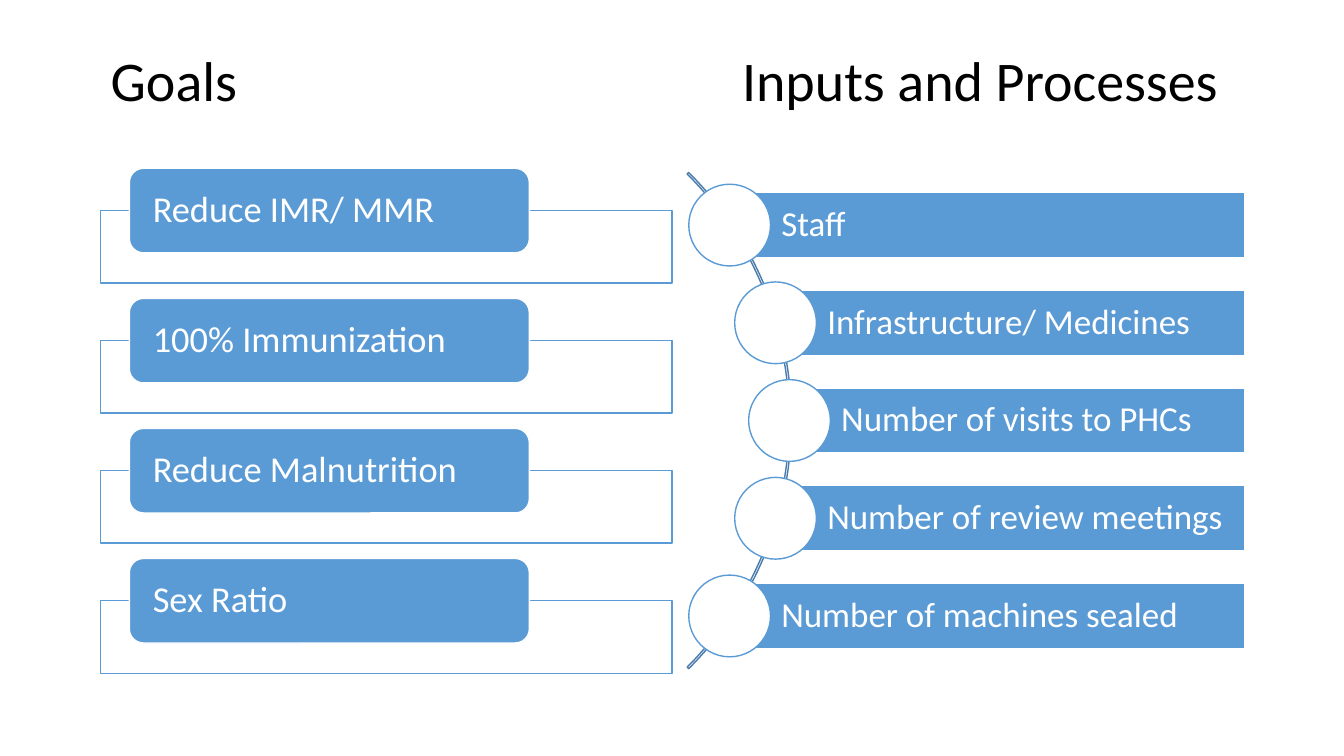
import math

import pptx
import pptx.dml.color
import pptx.enum.shapes
import pptx.enum.text
import pptx.util

Pt = pptx.util.Pt
KIND = pptx.enum.shapes.MSO_SHAPE
FONT = "Calibri"
HUES = {"blue": "5B9BD5", "dark": "497CAB", "white": "FFFFFF", "black": "000000"}
GOALS = ["Reduce IMR/ MMR", "100% Immunization", "Reduce Malnutrition", "Sex Ratio"]
INPUTS = ["Staff", "Infrastructure/ Medicines", "Number of visits to PHCs",
          "Number of review meetings", "Number of machines sealed"]


def color(name):
    return pptx.dml.color.RGBColor.from_string(HUES[name])


def add_box(slide, kind, box, fill, line):
    shape = slide.shapes.add_shape(kind, *map(Pt, box))
    shape.shadow.inherit = False
    if fill:
        shape.fill.solid()
        shape.fill.fore_color.rgb = color(fill)
    else:
        shape.fill.background()
    shape.line.color.rgb = color(line)
    shape.line.width = Pt(1)
    return shape


def set_text(shape, text, size, hue):
    para = shape.text_frame.paragraphs[0]
    para.text = text
    para.alignment = pptx.enum.text.PP_ALIGN.LEFT
    font = para.runs[0].font
    font.name, font.size = FONT, Pt(size)
    font.color.rgb = color(hue)
    return para


def add_label(shape, text, size, left, pad):
    frame = shape.text_frame
    frame.word_wrap = True
    frame.vertical_anchor = pptx.enum.text.MSO_ANCHOR.MIDDLE
    frame.margin_left = Pt(left)
    frame.margin_right = frame.margin_top = frame.margin_bottom = Pt(pad)
    set_text(shape, text, size, "white").line_spacing = 0.9


def add_title(slide, text, box):
    title = slide.shapes.add_textbox(*map(Pt, box))
    title.text_frame.word_wrap = False
    title.text_frame.auto_size = pptx.enum.text.MSO_AUTO_SIZE.SHAPE_TO_FIT_TEXT
    set_text(title, text, 40, "black")


def add_goals(slide, box):
    left, top, width, height = box
    card, frame = 60.4, 51.8
    drop = 30.2  # frame starts halfway down its card
    step = (height - drop - frame) / (len(GOALS) - 1)
    for i, goal in enumerate(GOALS):
        y = top + i * step
        add_box(slide, KIND.RECTANGLE, (left, y + drop, width, frame), "white", "blue")
        shape = add_box(slide, KIND.ROUNDED_RECTANGLE,
                        (left + width * 0.05, y, width * 0.7, card), "blue", "white")
        add_label(shape, goal, 26, 13.8, 3)


def add_inputs(slide, box):
    left, top, width, height = box
    radius, step, dot, bar = 249.2, 69.8, 58.4, 46.5
    mid = top + height / 2
    last = len(INPUTS) // 2
    # Centre of the arc, set so that the outer dots touch the left edge
    hub = left + dot / 2 - math.sqrt(radius ** 2 - (last * step) ** 2)

    # Thin arc behind the rows
    rim = radius + 1.4
    arc = add_box(slide, KIND.BLOCK_ARC, (hub - rim, mid - rim, 2 * rim, 2 * rim),
                  None, "dark")
    for i, value in enumerate((189, 27, 0.0031)):
        arc.adjustments[i] = value

    # Bars start at the dots, which sit on the arc
    for i, text in enumerate(INPUTS):
        rise = (i - last) * step
        x, y = hub + math.sqrt(radius ** 2 - rise ** 2), mid + rise
        shape = add_box(slide, KIND.RECTANGLE,
                        (x, y - bar / 2, left + width - x, bar), "blue", "white")
        add_label(shape, text, 25, 36.9, 5)
        add_box(slide, KIND.OVAL, (x - dot / 2, y - dot / 2, dot, dot), "white", "blue")


def main():
    deck = pptx.Presentation()
    deck.slide_width, deck.slide_height = Pt(960), Pt(540)
    slide = deck.slides.add_slide(deck.slide_layouts[6])
    add_inputs(slide, (492, 120.4, 396.8, 360))
    add_goals(slide, (72, 120.2, 408.2, 360.7))
    add_title(slide, "Goals", (72, 29.2, 106, 55.7))
    add_title(slide, "Inputs and Processes", (523, 29.2, 358, 55.7))
    deck.save("out.pptx")


if __name__ == "__main__":
    main()
